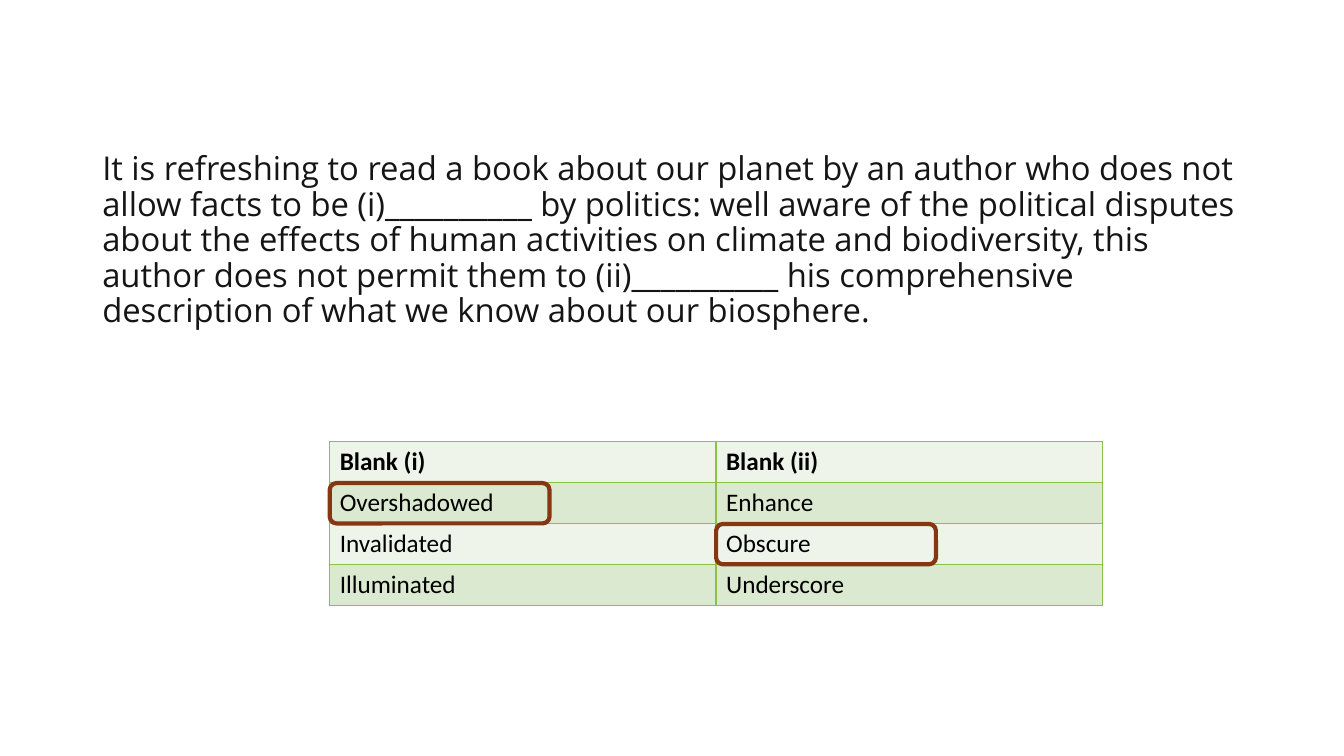
from lxml.etree import SubElement
from pptx import Presentation
from pptx.dml.color import RGBColor
from pptx.enum.shapes import MSO_SHAPE
from pptx.enum.text import MSO_ANCHOR
from pptx.oxml.ns import qn
from pptx.util import Pt

LEFT, TOP = 235.5, 315.5
COL, ROW = 276, 29.2
PASSAGE = (
    "It is refreshing to read a book about our planet by an author who does not "
    "allow facts to be (i)__________ by politics: well aware of the political "
    "disputes about the effects of human activities on climate and biodiversity, "
    "this author does not permit them to (ii)__________ his comprehensive "
    "description of what we know about our biosphere."
)
CHOICES = [
    ("Blank (i)", "Blank (ii)"),
    ("Overshadowed", "Enhance"),
    ("Invalidated", "Obscure"),
    ("Illuminated", "Underscore"),
]
ANSWERS = [(1, 0), (2, 1)]


def color(code):
    return RGBColor.from_string(code)


def add_run(para, text, face, size, code, bold=False):
    run = para.add_run()
    run.text = text
    font = run.font
    font.name, font.size, font.bold = face, Pt(size), bold
    font.color.rgb = color(code)


def add_passage(slide):
    box = slide.shapes.add_textbox(Pt(66), Pt(120), Pt(828), Pt(104.4))
    frame = box.text_frame
    frame.word_wrap = True
    frame.vertical_anchor = MSO_ANCHOR.MIDDLE
    para = frame.paragraphs[0]
    para.line_spacing = 0.9
    add_run(para, PASSAGE, "Open Sans", 23.4, "151515")


def add_border(cell, code):
    props = cell._tc.get_or_add_tcPr()
    for index, side in enumerate(("lnL", "lnR", "lnT", "lnB")):
        line = props.makeelement(qn("a:" + side), {"w": str(Pt(1))})
        fill = SubElement(line, qn("a:solidFill"))
        SubElement(fill, qn("a:srgbClr"), val=code)
        props.insert(index, line)


def add_choices(slide):
    rows, cols = len(CHOICES), len(CHOICES[0])
    table = slide.shapes.add_table(
        rows, cols, Pt(LEFT), Pt(TOP), Pt(cols * COL), Pt(rows * ROW)
    ).table
    for col in table.columns:
        col.width = Pt(COL)
    for r, words in enumerate(CHOICES):
        table.rows[r].height = Pt(ROW)
        for c, word in enumerate(words):
            cell = table.cell(r, c)
            cell.fill.solid()
            cell.fill.fore_color.rgb = color("DAE9CF" if r % 2 else "EEF4E9")
            add_border(cell, "8BC145")
            para = cell.text_frame.paragraphs[0]
            add_run(para, word, "Calibri", 18, "000000", r == 0)


def add_mark(slide, row, col):
    mark = slide.shapes.add_shape(
        MSO_SHAPE.ROUNDED_RECTANGLE,
        Pt(LEFT + col * COL), Pt(TOP + row * ROW + 0.4), Pt(157), Pt(28.8),
    )
    mark.shadow.inherit = False
    mark.fill.background()
    mark.line.color.rgb = color("873612")
    mark.line.width = Pt(3)


def main():
    deck = Presentation()
    deck.slide_width, deck.slide_height = Pt(960), Pt(540)
    slide = deck.slides.add_slide(deck.slide_layouts[6])
    add_passage(slide)
    add_choices(slide)
    for row, col in ANSWERS:
        add_mark(slide, row, col)
    deck.save("out.pptx")


if __name__ == "__main__":
    main()
